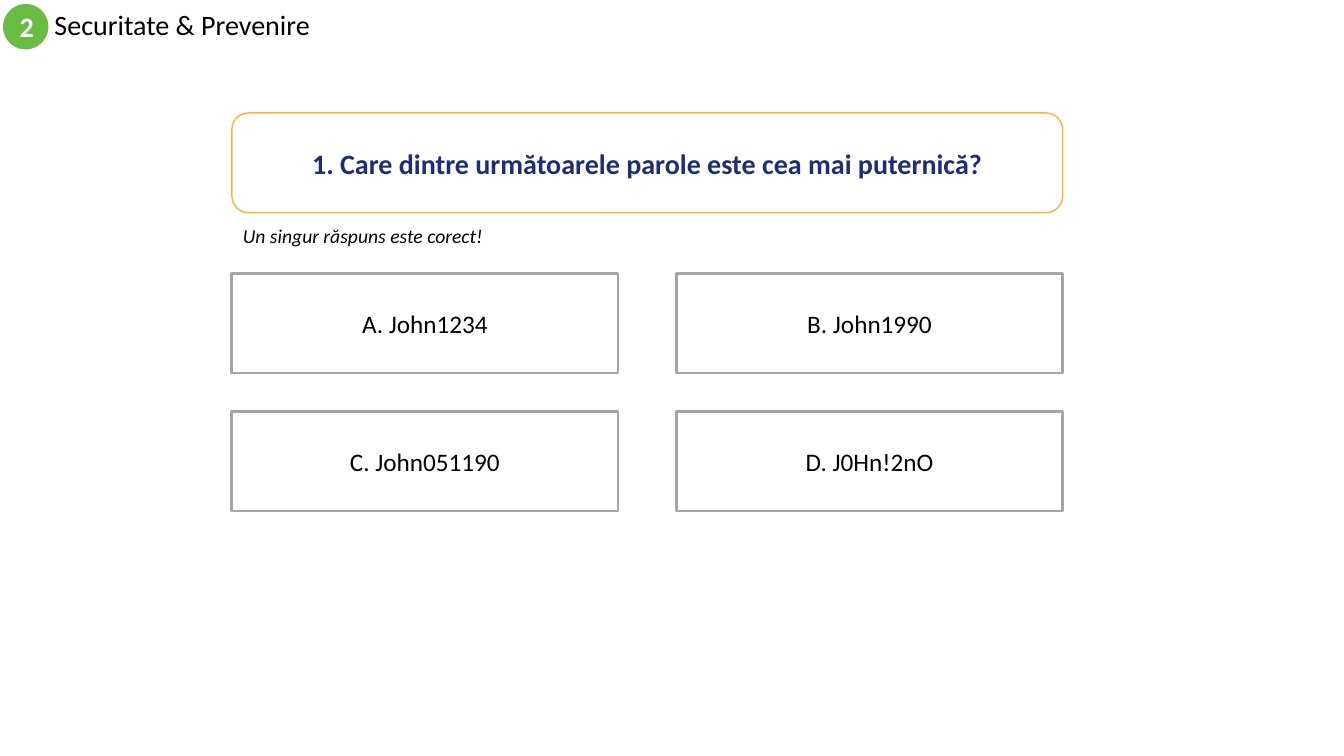
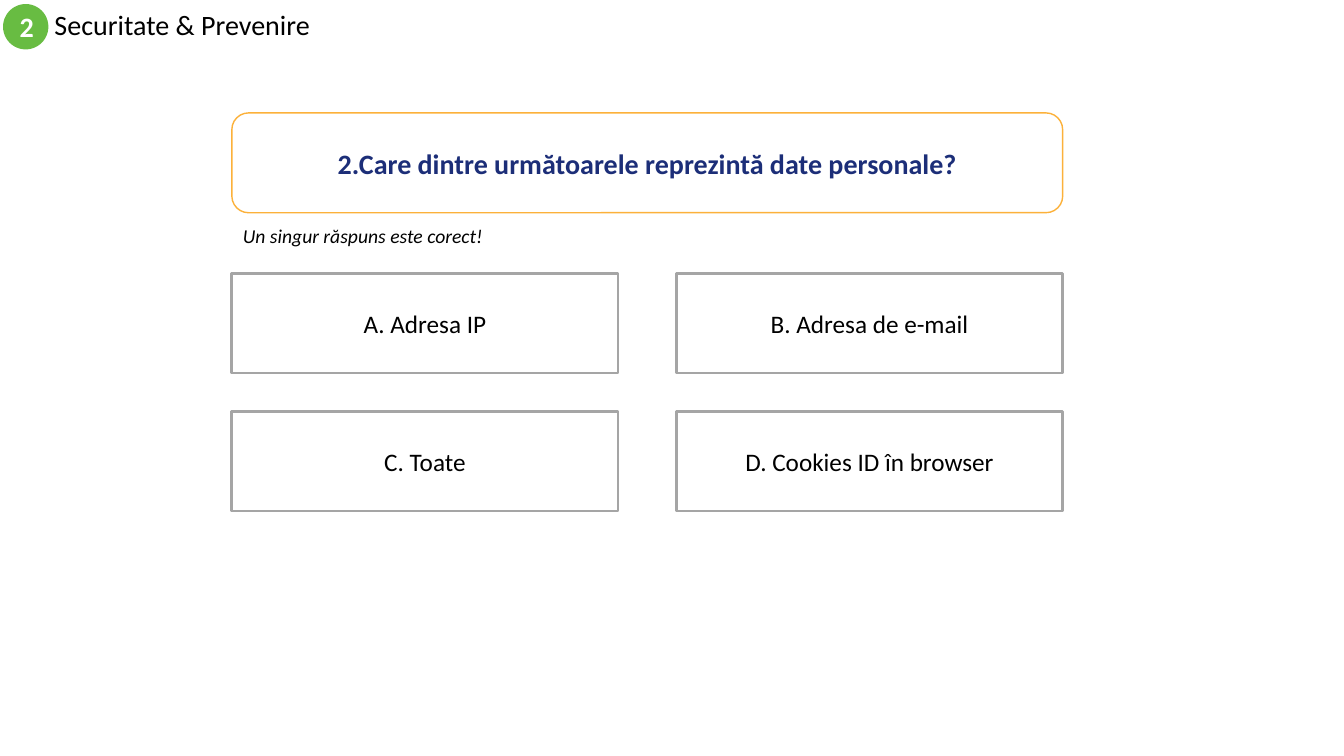
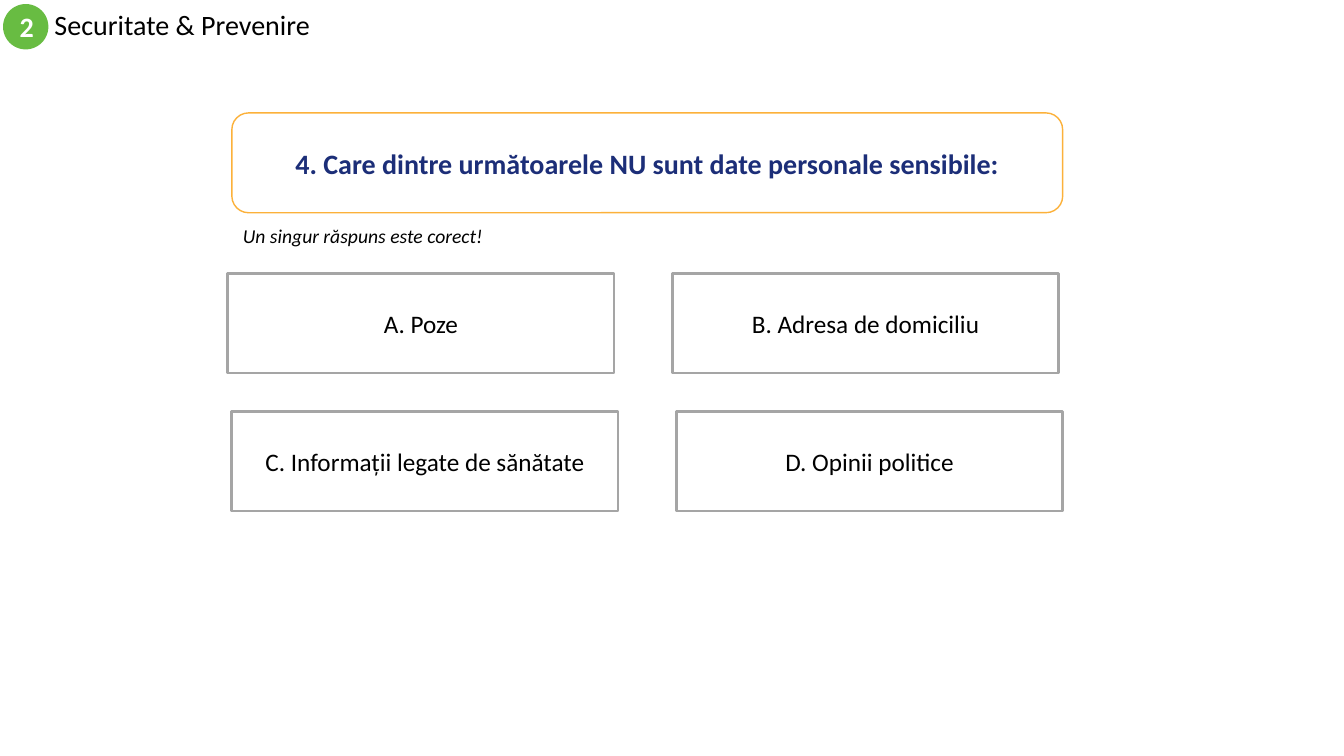
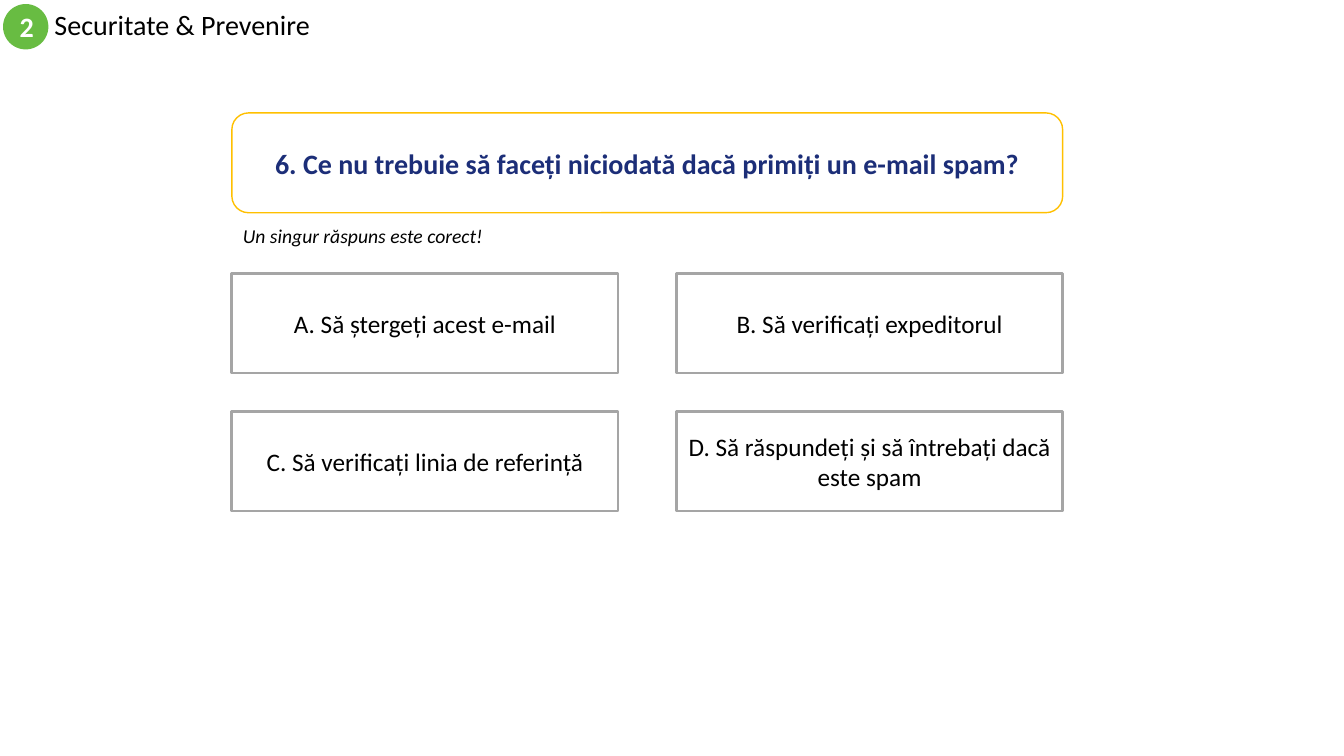
from pptx import Presentation
from pptx.dml.color import RGBColor
from pptx.enum.shapes import MSO_SHAPE
from pptx.enum.text import MSO_ANCHOR, MSO_AUTO_SIZE, PP_ALIGN
from pptx.util import Inches, Pt

COLOURS = {
    "white": "FFFFFF",
    "black": "000000",
    "green": "68BC42",
    "navy": "1C2E78",
    "orange": "FCB13A",
    "amber": "FFC000",
    "grey": "A5A5A5",
}
FONT = "Calibri"

# Answer grid: two columns and two rows below the question
GRID_LEFT, GRID_TOP, GRID_WIDTH = 2.3, 2.71, 8.24
COLUMN_GAP, ROW_GAP = 0.58, 0.38
CARD_WIDTH = (GRID_WIDTH - COLUMN_GAP) / 2
CARD_HEIGHT = 0.99

# Question, question outline, shift of the first row, answers
QUIZ = [
    ("1. Care dintre următoarele parole este cea mai puternică?", "orange", 0,
     ["A. John1234", "B. John1990", "C. John051190", "D. J0Hn!2nO"]),
    ("2.Care dintre următoarele reprezintă date personale?", "orange", 0,
     ["A. Adresa IP", "B. Adresa de e-mail", "C. Toate", "D. Cookies ID în browser"]),
    ("4. Care dintre următoarele NU sunt date personale sensibile:", "orange", -0.04,
     ["A. Poze", "B. Adresa de domiciliu",
      "C. Informații legate de sănătate", "D. Opinii politice"]),
    ("6. Ce nu trebuie să faceți niciodată dacă primiți un e-mail spam?", "amber", 0,
     ["A. Să ștergeți acest e-mail", "B. Să verificați expeditorul",
      "C. Să verificați linia de referință",
      "D. Să răspundeți și să întrebați dacă este spam"]),
]


def write(box, text, size, colour="black", bold=False, italic=False,
          align=PP_ALIGN.CENTER, anchor=MSO_ANCHOR.MIDDLE):
    """Put one formatted run into the box and return its paragraph."""
    frame = box.text_frame
    frame.word_wrap = True
    frame.auto_size = MSO_AUTO_SIZE.NONE
    frame.vertical_anchor = anchor
    para = frame.paragraphs[0]
    para.alignment = align
    span = para.add_run()
    span.text = text
    span.font.name = FONT
    span.font.size = Pt(size)
    span.font.bold = bold
    span.font.italic = italic
    span.font.color.rgb = RGBColor.from_string(COLOURS[colour])
    return para


def add_box(slide, kind, left, top, width, height, fill, line=None, weight=1):
    box = slide.shapes.add_shape(kind, Inches(left), Inches(top), Inches(width), Inches(height))
    box.shadow.inherit = False
    box.fill.solid()
    box.fill.fore_color.rgb = RGBColor.from_string(COLOURS[fill])
    if line:
        box.line.color.rgb = RGBColor.from_string(COLOURS[line])
        box.line.width = Pt(weight)
    else:
        box.line.fill.background()
    return box


deck = Presentation()
deck.slide_width, deck.slide_height = Inches(13.33), Inches(7.5)

# Every slide inherits the place of its title from this layout
layout = deck.slide_layouts.get_by_name("Title Only")
layout_title = layout.placeholders[0]
layout_title.left, layout_title.top = Inches(0.44), Inches(0.04)
layout_title.width, layout_title.height = Inches(8), Inches(0.45)

for question, outline, first_row_shift, answers in QUIZ:
    slide = deck.slides.add_slide(layout)
    heading = write(slide.shapes.title, "Securitate & Prevenire", 20, align=PP_ALIGN.LEFT)
    heading.line_spacing = 0.9

    badge = add_box(slide, MSO_SHAPE.OVAL, 0.03, 0.04, 0.45, 0.45, "green")
    write(badge, "2", 20, "white", bold=True)

    question_box = add_box(slide, MSO_SHAPE.ROUNDED_RECTANGLE, GRID_LEFT, 1.12,
                           GRID_WIDTH, CARD_HEIGHT, "white", outline)
    write(question_box, question, 20, "navy", bold=True)

    hint = slide.shapes.add_textbox(Inches(2.31), Inches(2.17), Inches(2.61), Inches(0.34))
    write(hint, "Un singur răspuns este corect!", 14, italic=True,
          align=PP_ALIGN.LEFT, anchor=MSO_ANCHOR.TOP)

    for index, answer in enumerate(answers):
        row, column = divmod(index, 2)
        left = GRID_LEFT + column * (CARD_WIDTH + COLUMN_GAP)
        if row == 0:
            left += first_row_shift
        top = GRID_TOP + row * (CARD_HEIGHT + ROW_GAP)
        card = add_box(slide, MSO_SHAPE.RECTANGLE, left, top, CARD_WIDTH, CARD_HEIGHT,
                       "white", "grey", 2)
        write(card, answer, 18)

deck.save("out.pptx")
